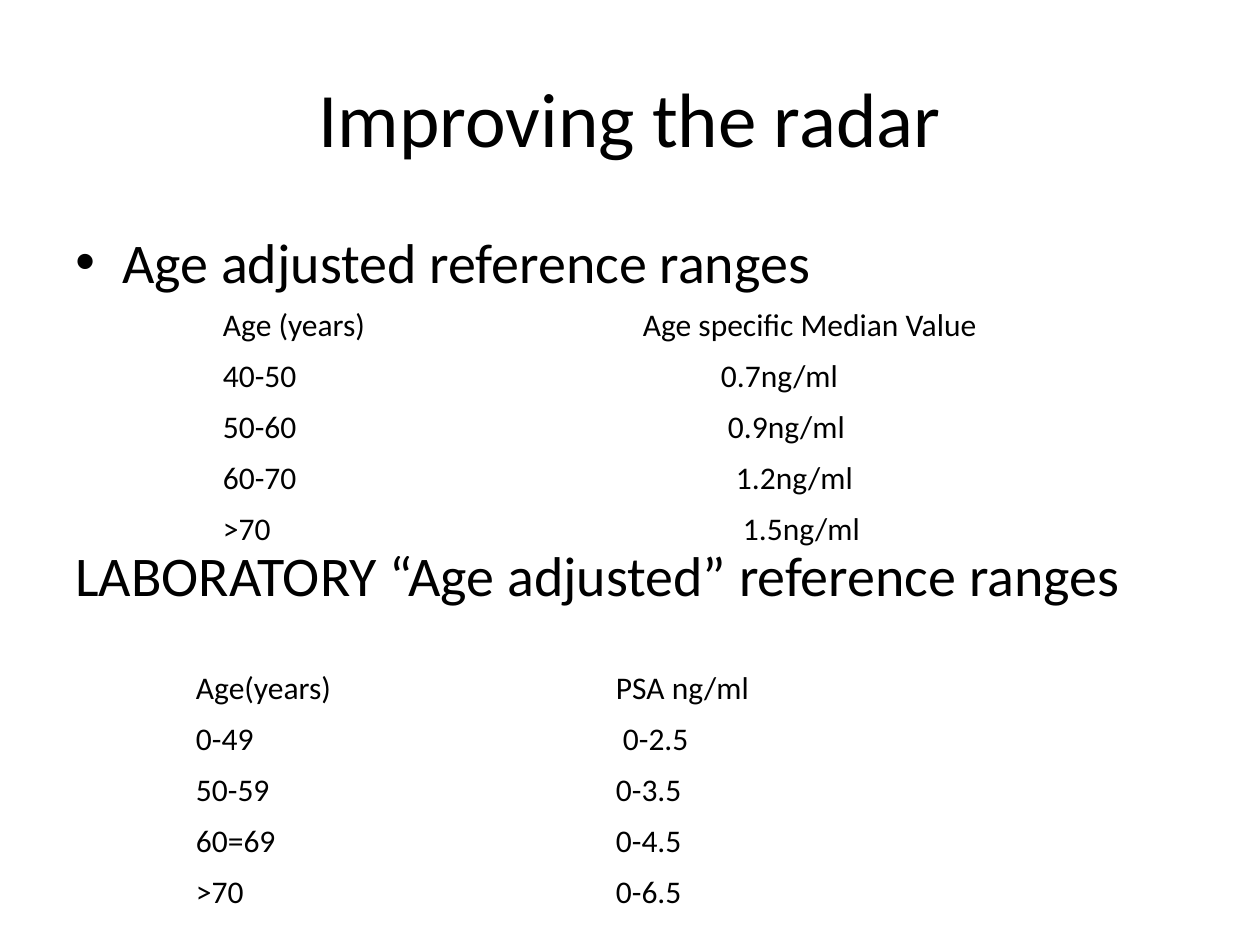
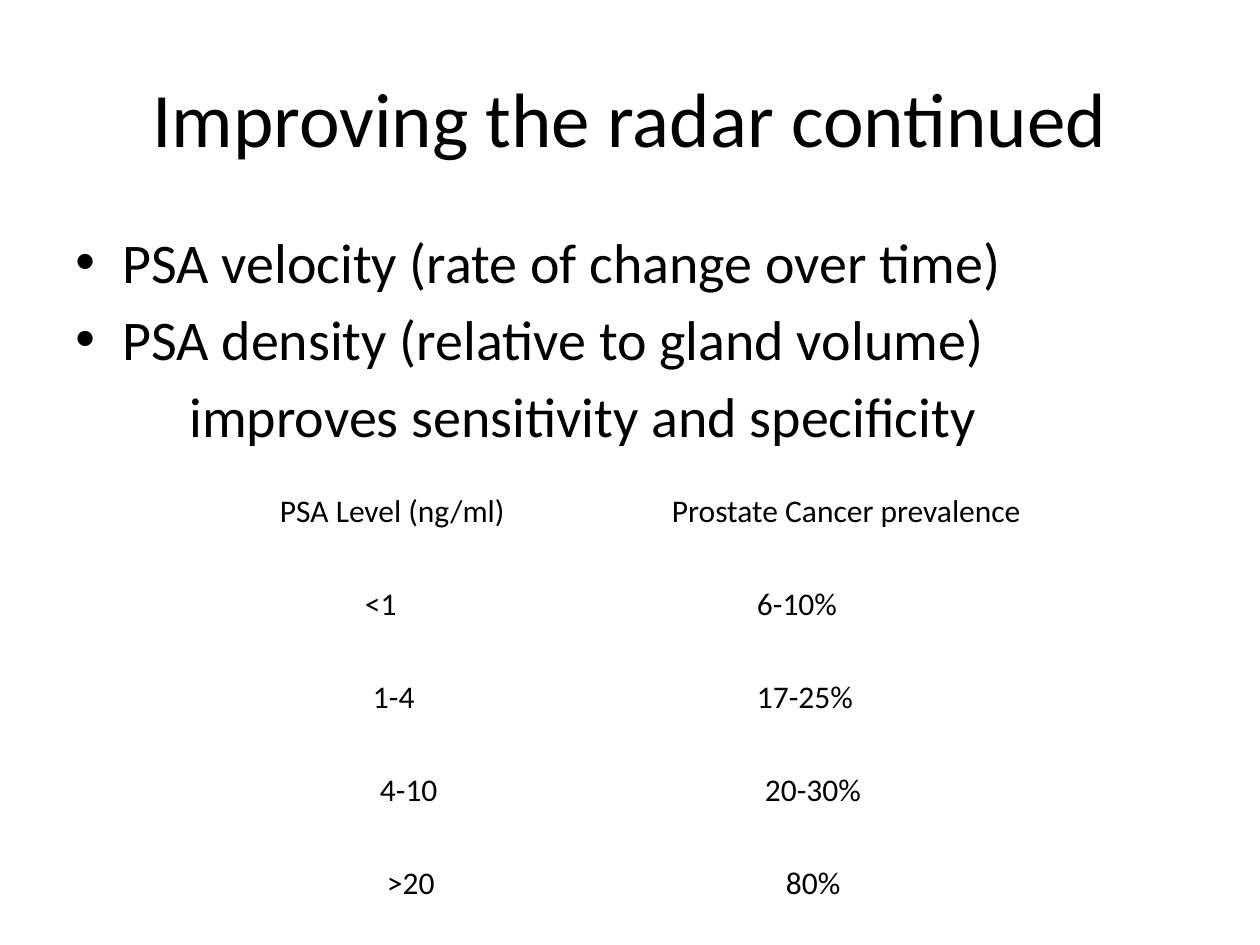
from dataclasses import dataclass

from lxml import etree
from pptx import Presentation
from pptx.dml.color import RGBColor
from pptx.enum.text import MSO_ANCHOR, PP_ALIGN
from pptx.oxml.ns import qn
from pptx.util import Emu, Pt

CENTER = PP_ALIGN.CENTER
LEFT = PP_ALIGN.LEFT
TOP = MSO_ANCHOR.TOP
MIDDLE = MSO_ANCHOR.MIDDLE

# Shared style
PX_PER_INCH = 126
FONT = "Calibri"
INK = "000000"
PAPER = "FFFFFF"
TITLE_PT, BODY_PT, CELL_PT = 44, 32, 18
CELL_MARGIN = 13
BULLET_INDENT = 47
LINE_GAP = 10


@dataclass(frozen=True)
class Box:
    left: int
    top: int
    width: int
    height: int


TITLE_BOX = Box(63, 38, 1134, 158)
BODY_BOX = Box(63, 221, 1134, 624)


@dataclass(frozen=True)
class Line:
    text: str
    bullet: bool = True
    indent: int = 0
    gap: int = LINE_GAP


@dataclass(frozen=True)
class Cell:
    text: str
    indent: int = 0


@dataclass(frozen=True)
class Grid:
    left: int
    top: int
    col_width: int
    row_height: int
    rows: list[tuple[Cell, Cell]]


@dataclass(frozen=True)
class Page:
    title: str
    lines: list[Line]
    grids: list[Grid]


def px(n: int) -> Emu:
    return Emu(round(n * 914400 / PX_PER_INCH))


def color(value: str) -> RGBColor:
    return RGBColor.from_string(value)


def style(p, size: int, align=LEFT) -> None:
    p.alignment = align
    p.font.name = FONT
    p.font.size = Pt(size)
    p.font.color.rgb = color(INK)


def set_indent(p, line: Line) -> None:
    pPr = p._p.get_or_add_pPr()
    if not line.bullet:
        pPr.set("marL", str(px(line.indent)))
        return
    pPr.set("marL", str(px(BULLET_INDENT)))
    pPr.set("indent", str(px(-BULLET_INDENT)))
    font = etree.Element(qn("a:buFont"), typeface="Arial")
    char = etree.Element(qn("a:buChar"), char="•")
    # Bullet elements must come before the default run properties
    at = pPr.index(pPr.find(qn("a:defRPr")))
    pPr[at:at] = [font, char]


def add_text_frame(s, box: Box, anchor):
    sp = s.shapes.add_textbox(px(box.left), px(box.top), px(box.width), px(box.height))
    tf = sp.text_frame
    tf.word_wrap = True
    tf.vertical_anchor = anchor
    return tf


def add_title(s, text: str) -> None:
    p = add_text_frame(s, TITLE_BOX, MIDDLE).paragraphs[0]
    p.text = text
    style(p, TITLE_PT, CENTER)


def add_body(s, lines: list[Line]) -> None:
    tf = add_text_frame(s, BODY_BOX, TOP)
    for i, line in enumerate(lines):
        p = tf.add_paragraph() if i else tf.paragraphs[0]
        p.text = line.text
        style(p, BODY_PT)
        if i:
            p.space_before = Pt(round(line.gap * 72 / PX_PER_INCH, 1))
        set_indent(p, line)


def add_grid(s, grid: Grid) -> None:
    n_rows, n_cols = len(grid.rows), len(grid.rows[0])
    table = s.shapes.add_table(
        n_rows, n_cols, px(grid.left), px(grid.top),
        px(grid.col_width * n_cols), px(grid.row_height * n_rows)).table
    table.first_row = False
    table.horz_banding = False
    for column in table.columns:
        column.width = px(grid.col_width)
    for r, row in enumerate(grid.rows):
        table.rows[r].height = px(grid.row_height)
        for c, item in enumerate(row):
            cell = table.cell(r, c)
            cell.fill.background()
            cell.margin_left = px(CELL_MARGIN + item.indent)
            p = cell.text_frame.paragraphs[0]
            p.text = item.text
            style(p, CELL_PT)


# Content
MEDIANS = Grid(210, 300, 420, 51, [
    (Cell("Age (years)"), Cell("Age specific Median Value")),
    (Cell("40-50"), Cell("0.7ng/ml", 78)),
    (Cell("50-60"), Cell("0.9ng/ml", 85)),
    (Cell("60-70"), Cell("1.2ng/ml", 93)),
    (Cell(">70"), Cell("1.5ng/ml", 100)),
])
LAB_RANGES = Grid(183, 663, 420, 51, [
    (Cell("Age(years)"), Cell("PSA ng/ml")),
    (Cell("0-49"), Cell("0-2.5", 7)),
    (Cell("50-59"), Cell("0-3.5")),
    (Cell("60=69"), Cell("0-4.5")),
    (Cell(">70"), Cell("0-6.5")),
])
PREVALENCE = Grid(267, 486, 392, 93, [
    (Cell("PSA Level (ng/ml)"), Cell("Prostate Cancer prevalence")),
    (Cell("<1", 85), Cell("6-10%", 85)),
    (Cell("1-4", 93), Cell("17-25%", 85)),
    (Cell("4-10", 100), Cell("20-30%", 93)),
    (Cell(">20", 107), Cell("80%", 114)),
])
PAGES = [
    Page("Improving the radar", [
        Line("Age adjusted reference ranges"),
        Line("LABORATORY “Age adjusted” reference ranges", bullet=False, gap=246),
    ], [MEDIANS, LAB_RANGES]),
    Page("Improving the radar continued", [
        Line("PSA velocity (rate of change over time)"),
        Line("PSA density (relative to gland volume)"),
        Line("improves sensitivity and specificity", bullet=False, indent=114),
    ], [PREVALENCE]),
]


def main() -> None:
    prs = Presentation()
    prs.slide_width, prs.slide_height = px(1260), px(945)
    for page in PAGES:
        s = prs.slides.add_slide(prs.slide_layouts[6])
        s.background.fill.solid()
        s.background.fill.fore_color.rgb = color(PAPER)
        add_title(s, page.title)
        add_body(s, page.lines)
        for grid in page.grids:
            add_grid(s, grid)
    prs.save("out.pptx")


if __name__ == "__main__":
    main()
